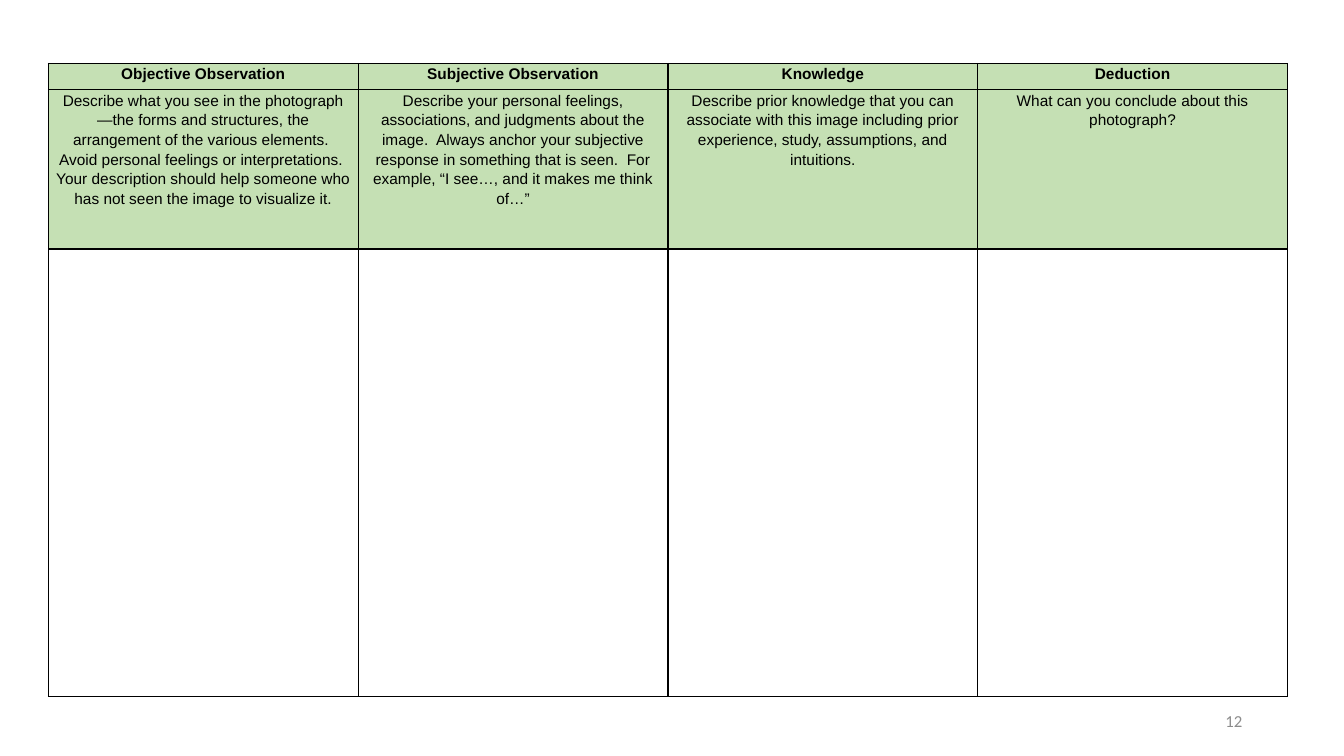
from lxml import etree
from pptx import Presentation
from pptx import util as u
from pptx.dml.color import RGBColor
from pptx.enum import text
from pptx.oxml import ns

WIDTH, HEIGHT = u.Inches(13.33), u.Inches(7.5)
COLOURS = {"ink": "000000", "green": "C5E0B4", "grey": "8C8C8C"}

# Table grid, in inches
TABLE_LEFT, TABLE_TOP, TABLE_WIDTH = 0.48, 0.63, 12.29
ROW_HEIGHTS = (0.26, 1.58, 4.44)

# Heading and prompt of each column
COLUMNS = [
    ("Objective Observation",
     "Describe what you see in the photograph—the forms and structures, the "
     "arrangement of the various elements.  Avoid personal feelings or "
     "interpretations.  Your description should help someone who has not seen "
     "the image to visualize it."),
    ("Subjective Observation",
     "Describe your personal feelings, associations, and judgments about the "
     "image.  Always anchor your subjective response in something that is "
     "seen.  For example, “I see…, and it makes me think of…”"),
    ("Knowledge",
     "Describe prior knowledge that you can associate with this image "
     "including prior experience, study, assumptions, and intuitions."),
    ("Deduction",
     "What can you conclude about this photograph?"),
]


def add_run(paragraph, words, size, font, colour, bold=False):
    run = paragraph.add_run()
    run.text = words
    run.font.size = u.Pt(size)
    run.font.name = font
    run.font.bold = bold
    run.font.color.rgb = RGBColor.from_string(COLOURS[colour])


def set_borders(cell):
    properties = cell._tc.get_or_add_tcPr()
    for position, side in enumerate(("lnL", "lnR", "lnT", "lnB")):
        line = etree.Element(ns.qn(f"a:{side}"), w=str(u.Pt(1)))
        fill = etree.SubElement(line, ns.qn("a:solidFill"))
        etree.SubElement(fill, ns.qn("a:srgbClr"), val=COLOURS["ink"])
        properties.insert(position, line)  # borders come before the fill


def fill_prompt_cell(cell, words, bold):
    cell.fill.solid()
    cell.fill.fore_color.rgb = RGBColor.from_string(COLOURS["green"])
    cell.margin_left = cell.margin_right = u.Inches(0.07)
    cell.margin_top = cell.margin_bottom = 0
    paragraph = cell.text_frame.paragraphs[0]
    paragraph.alignment = text.PP_ALIGN.CENTER
    paragraph.line_spacing = 1.15
    add_run(paragraph, words, 11, "Arial", "ink", bold)


def add_worksheet(slide):
    table = slide.shapes.add_table(
        len(ROW_HEIGHTS), len(COLUMNS), u.Inches(TABLE_LEFT), u.Inches(TABLE_TOP),
        u.Inches(TABLE_WIDTH), u.Inches(sum(ROW_HEIGHTS))).table
    table.first_row = table.horz_banding = False
    for row, height in zip(table.rows, ROW_HEIGHTS):
        row.height = u.Inches(height)
    for index, (heading, prompt) in enumerate(COLUMNS):
        table.columns[index].width = u.Inches(TABLE_WIDTH / len(COLUMNS))
        fill_prompt_cell(table.cell(0, index), heading, bold=True)
        fill_prompt_cell(table.cell(1, index), prompt, bold=False)
        table.cell(2, index).fill.background()  # space for the answer
    for cell in table.iter_cells():
        set_borders(cell)


def add_page_number(slide, number):
    box = slide.shapes.add_textbox(
        u.Inches(9.42), u.Inches(6.95), u.Inches(3), u.Inches(0.4))
    frame = box.text_frame
    frame.word_wrap = True
    frame.vertical_anchor = text.MSO_ANCHOR.MIDDLE
    paragraph = frame.paragraphs[0]
    paragraph.alignment = text.PP_ALIGN.RIGHT
    add_run(paragraph, number, 12, "Calibri", "grey")


def main():
    presentation = Presentation()
    presentation.slide_width, presentation.slide_height = WIDTH, HEIGHT
    slide = presentation.slides.add_slide(presentation.slide_layouts[6])
    add_worksheet(slide)
    add_page_number(slide, "12")
    presentation.save("out.pptx")


if __name__ == "__main__":
    main()
